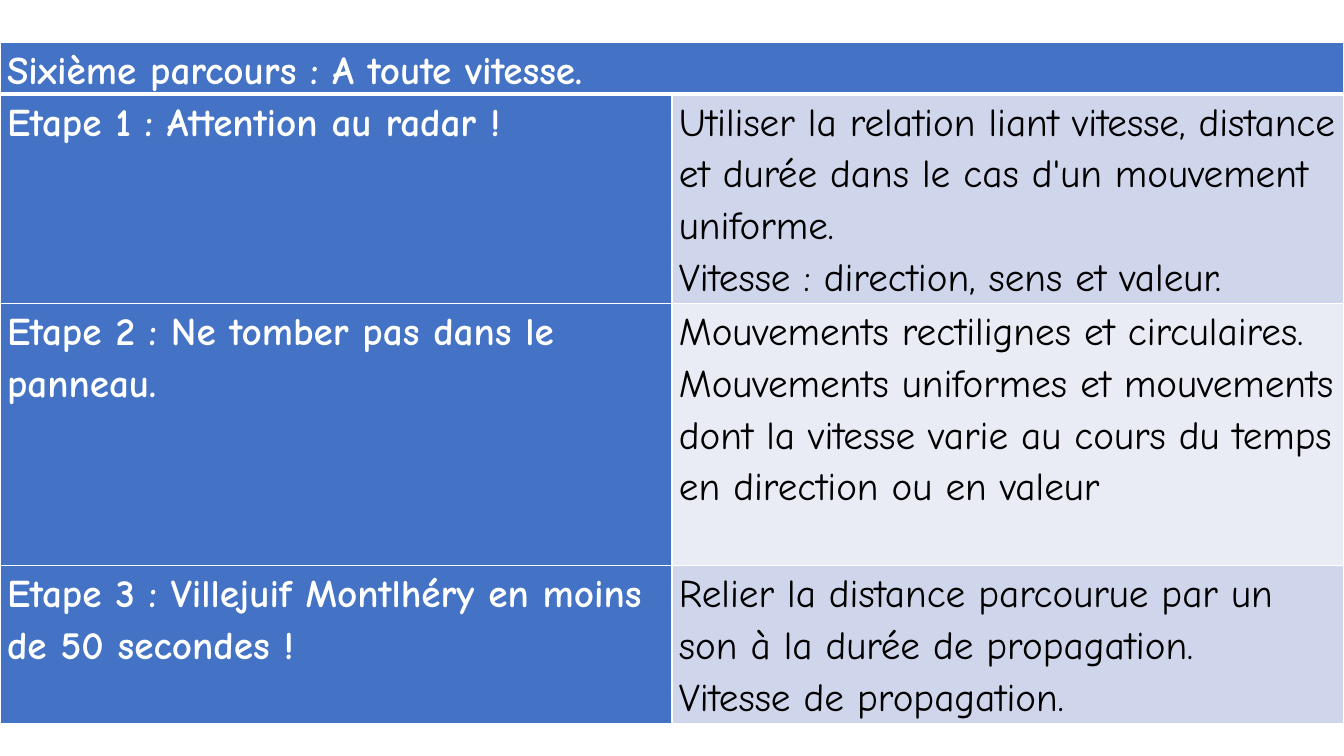
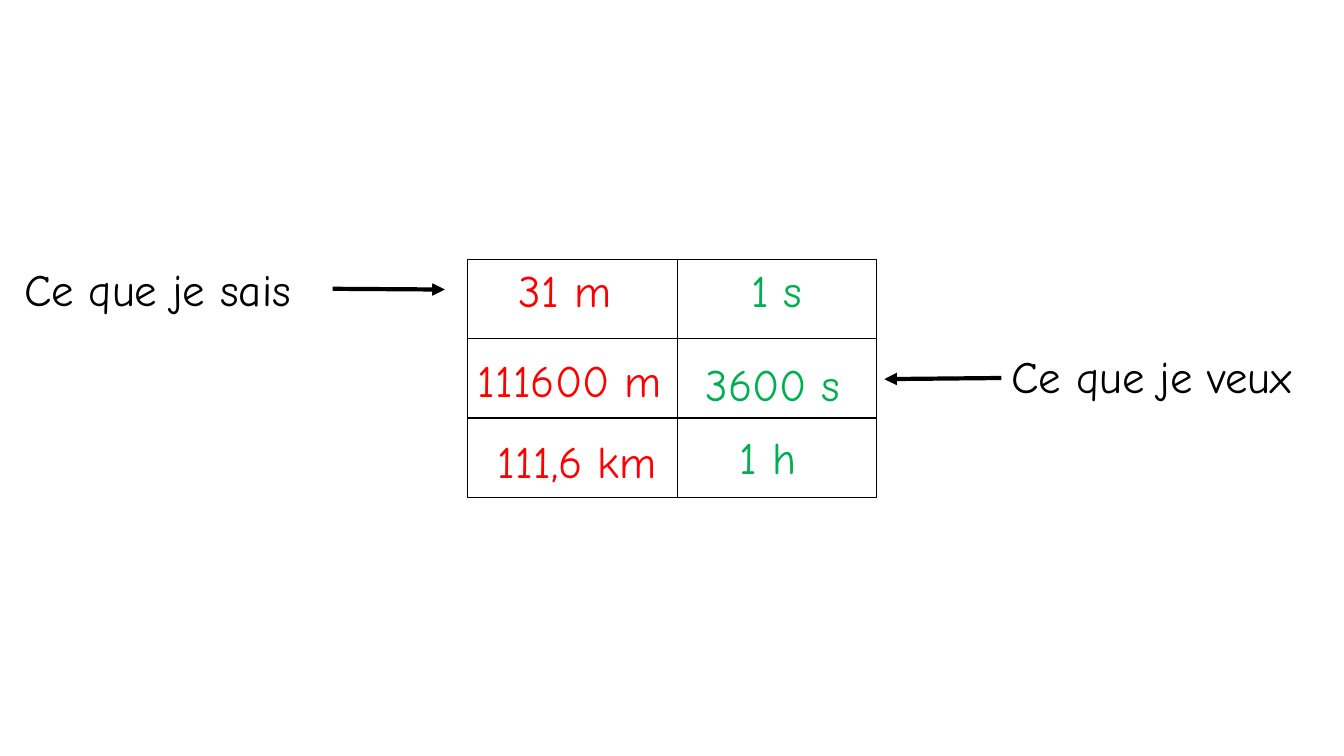
import pptx
import pptx.util
import pptx.dml.color
import pptx.enum.shapes
import pptx.enum.text
import pptx.oxml.ns
import lxml.etree

FONT = "Comic Neue"
BLACK = pptx.dml.color.RGBColor(0x00, 0x00, 0x00)
WHITE = pptx.dml.color.RGBColor(0xFF, 0xFF, 0xFF)
BLUE = pptx.dml.color.RGBColor(0x44, 0x72, 0xC4)
DARK_BAND = pptx.dml.color.RGBColor(0xCF, 0xD5, 0xEA)
LIGHT_BAND = pptx.dml.color.RGBColor(0xE9, 0xEB, 0xF5)
RED = pptx.dml.color.RGBColor(0xFF, 0x00, 0x00)
GREEN = pptx.dml.color.RGBColor(0x00, 0xB0, 0x50)
CENTER = pptx.enum.text.PP_ALIGN.CENTER
LINE_SPACING = 1.15

presentation = pptx.Presentation()
presentation.slide_width = pptx.util.Inches(13.333)
presentation.slide_height = pptx.util.Inches(7.5)
column = presentation.slide_width / 100
row = presentation.slide_height / 100
blank_layout = presentation.slide_layouts[6]


def write_text(text_frame, lines, size, color, bold=False, spacing=LINE_SPACING, alignment=None):
    for index, line in enumerate(lines):
        paragraph = text_frame.add_paragraph() if index else text_frame.paragraphs[0]
        paragraph.line_spacing = spacing
        paragraph.alignment = alignment
        run = paragraph.add_run()
        run.text = line
        run.font.name = FONT
        run.font.size = pptx.util.Pt(size)
        run.font.bold = bold
        run.font.color.rgb = color


def style_cell(cell, border_color, fill_color=None, bottom_width=1):
    cell.margin_left = cell.margin_right = pptx.util.Inches(0.07)
    cell.margin_top = cell.margin_bottom = 0
    properties = cell._tc.get_or_add_tcPr()
    for side, width in (("L", 1), ("R", 1), ("T", 1), ("B", bottom_width)):
        border = lxml.etree.SubElement(
            properties, pptx.oxml.ns.qn("a:ln" + side), w=str(pptx.util.Pt(width)))
        solid = lxml.etree.SubElement(border, pptx.oxml.ns.qn("a:solidFill"))
        lxml.etree.SubElement(solid, pptx.oxml.ns.qn("a:srgbClr"), val=str(border_color))
    if fill_color is None:
        cell.fill.background()
    else:
        cell.fill.solid()
        cell.fill.fore_color.rgb = fill_color


course_title = "Sixième parcours : A toute vitesse."
steps = [
    ("Etape 1 : Attention au radar !",
     ["Utiliser la relation liant vitesse, distance et durée dans le cas d'un mouvement uniforme.",
      "Vitesse : direction, sens et valeur."]),
    ("Etape 2 : Ne tomber pas dans le panneau.",
     ["Mouvements rectilignes et circulaires. Mouvements uniformes et mouvements "
      "dont la vitesse varie au cours du temps en direction ou en valeur"]),
    ("Etape 3 : Villejuif Montlhéry en moins de 50 secondes !",
     ["Relier la distance parcourue par un son à la durée de propagation.",
      "Vitesse de propagation."]),
]
step_row_shares = [6.8, 27.7, 34.7, 20.8]

slide = presentation.slides.add_slide(blank_layout)
shape = slide.shapes.add_table(
    len(step_row_shares), 2, 0, int(5.6 * row), int(100 * column), int(sum(step_row_shares) * row))
table = shape.table
table.first_row = table.horz_banding = False
for table_row, share in zip(table.rows, step_row_shares):
    table_row.height = int(share * row)

for cell in table.rows[0].cells:
    style_cell(cell, WHITE, BLUE, bottom_width=3)
table.cell(0, 0).merge(table.cell(0, 1))
write_text(table.cell(0, 0).text_frame, [course_title], 28, WHITE, bold=True)

for number, (step, skills) in enumerate(steps, 1):
    step_cell, skills_cell = table.rows[number].cells
    style_cell(step_cell, WHITE, BLUE)
    style_cell(skills_cell, WHITE, DARK_BAND if number % 2 else LIGHT_BAND)
    write_text(step_cell.text_frame, [step], 28, WHITE, bold=True)
    write_text(skills_cell.text_frame, skills, 28, BLACK)

slide = presentation.slides.add_slide(blank_layout)
value_column_shares = [15.6, 14.8]
value_row_share = 10.5
shape = slide.shapes.add_table(
    3, 2, int(34.8 * column), int(34.3 * row),
    int(sum(value_column_shares) * column), int(3 * value_row_share * row))
table = shape.table
table.first_row = table.horz_banding = False
for table_column, share in zip(table.columns, value_column_shares):
    table_column.width = int(share * column)
for table_row in table.rows:
    table_row.height = int(value_row_share * row)
    for cell in table_row.cells:
        style_cell(cell, BLACK)
for cell, value, color in zip(table.rows[0].cells, ("31 m ", "1 s"), (RED, GREEN)):
    write_text(cell.text_frame, [value], 32, color, alignment=CENTER)

labels = [
    ("3600 s", 51.75, 45.5, 12.4, GREEN, LINE_SPACING),
    ("111600 m", 34.8, 44.9, 17.4, RED, LINE_SPACING),
    ("1 h", 54.3, 55.1, 12.4, GREEN, LINE_SPACING),
    ("111,6 km", 36.3, 55.6, 14.4, RED, LINE_SPACING),
    ("Ce que je sais", 1.05, 34, 23.7, BLACK, 1.0),
    ("Ce que je veux", 74.5, 45.5, 25.5, BLACK, 1.0),
]
for text, left, top, width, color, spacing in labels:
    shape = slide.shapes.add_textbox(
        int(left * column), int(top * row), int(width * column), int(9 * row))
    shape.text_frame.word_wrap = True
    write_text(shape.text_frame, [text], 32, color, spacing=spacing)

arrows = [(24.75, 38.2, 33.1, 38.3), (74.5, 50, 65.8, 50.15)]
for start_x, start_y, end_x, end_y in arrows:
    connector = slide.shapes.add_connector(
        pptx.enum.shapes.MSO_CONNECTOR.STRAIGHT,
        int(start_x * column), int(start_y * row), int(end_x * column), int(end_y * row))
    connector.line.color.rgb = BLACK
    connector.line.width = pptx.util.Pt(3)
    line_xml = connector.line._get_or_add_ln()
    lxml.etree.SubElement(line_xml, pptx.oxml.ns.qn("a:tailEnd"), type="triangle")
    lxml.etree.SubElement(connector._element.spPr, pptx.oxml.ns.qn("a:effectLst"))

presentation.save("out.pptx")
